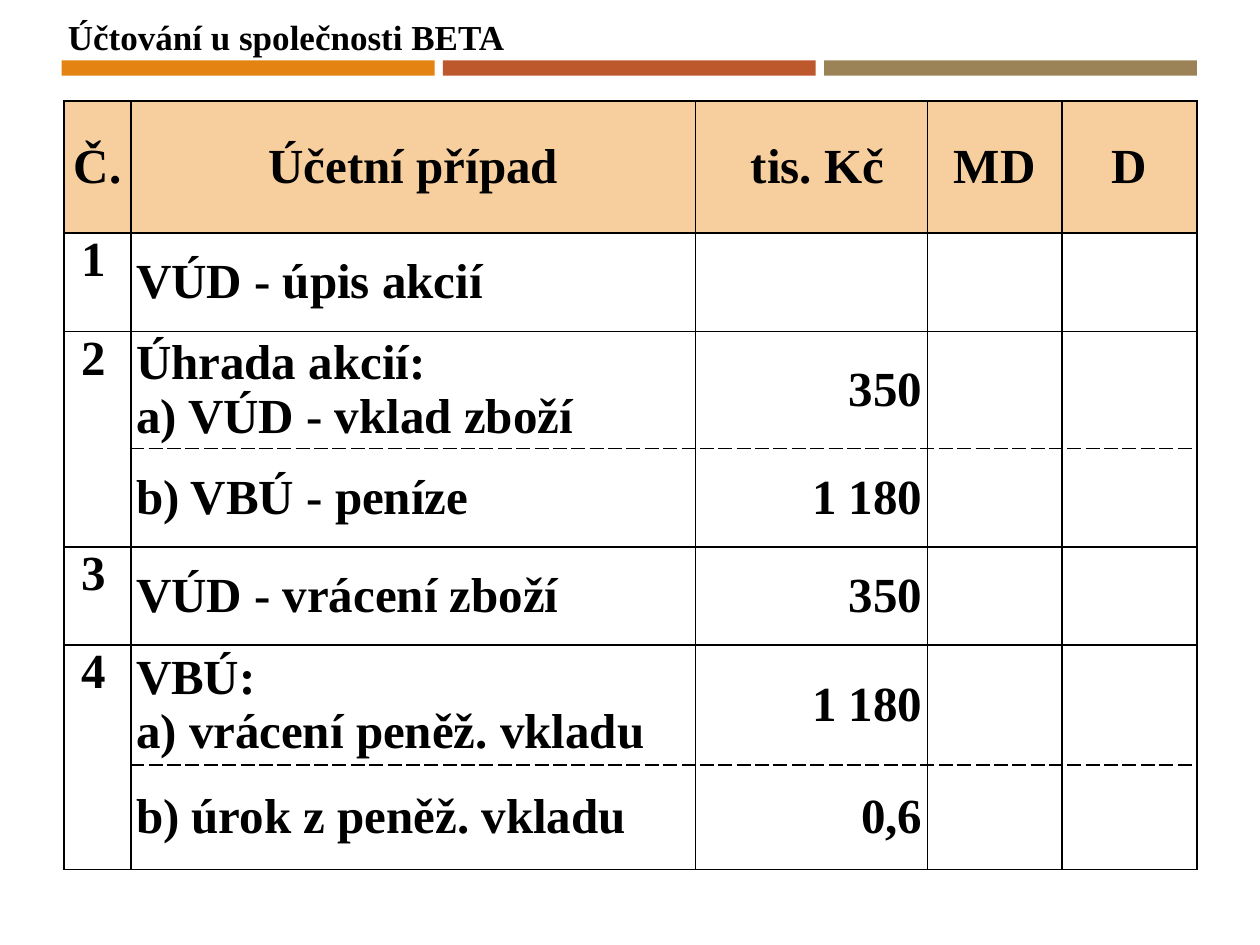
from dataclasses import dataclass

from lxml.etree import SubElement
from pptx import Presentation
from pptx.dml.color import RGBColor
from pptx.enum.shapes import MSO_SHAPE
from pptx.enum.text import MSO_ANCHOR, MSO_AUTO_SIZE, PP_ALIGN
from pptx.oxml.ns import qn
from pptx.util import Inches, Pt


@dataclass(frozen=True)
class Theme:
    font: str = "Times New Roman"
    title_size: int = 20
    table_size: int = 28
    text: str = "000000"
    header: str = "F7CE9D"
    bars: tuple = ("E48312", "BD582C", "9B8357")


theme = Theme()


def add_text(paragraph, text, size):
    run = paragraph.add_run()
    run.text = text
    run.font.name = theme.font
    run.font.size = Pt(size)
    run.font.bold = True
    run.font.color.rgb = RGBColor.from_string(theme.text)


def set_borders(cell, dashed_sides):
    properties = cell._tc.get_or_add_tcPr()
    for side in "LRTB":
        line = SubElement(properties, qn(f"a:ln{side}"), w=str(Pt(1)))
        fill = SubElement(line, qn("a:solidFill"))
        SubElement(fill, qn("a:srgbClr"), val=theme.text)
        dash = "dash" if side in dashed_sides else "solid"
        SubElement(line, qn("a:prstDash"), val=dash)


presentation = Presentation()
presentation.slide_width = Inches(10)
presentation.slide_height = Inches(7.5)
slide = presentation.slides.add_slide(presentation.slide_layouts[6])

# Coloured bars under the title
for index, color in enumerate(theme.bars):
    bar = slide.shapes.add_shape(
        MSO_SHAPE.RECTANGLE, Inches(0.49 + index * 3.025), Inches(0.48),
        Inches(2.96), Inches(0.12))
    bar.shadow.inherit = False
    bar.fill.solid()
    bar.fill.fore_color.rgb = RGBColor.from_string(color)
    bar.line.fill.background()

# Journal table: entries a) and b) share one number and a dashed divider
column_widths = [0.53, 4.48, 1.84, 1.07, 1.07]
row_heights = [1.05, 0.78, 0.93, 0.78, 0.78, 0.95, 0.83]
rows = [
    ["Č.", "Účetní případ", " tis. Kč", "MD", "D"],
    [" 1", "VÚD - úpis akcií", "", "", ""],
    [" 2", "Úhrada akcií:\na) VÚD - vklad zboží", "350", "", ""],
    ["", "b) VBÚ - peníze", "1 180", "", ""],
    [" 3", "VÚD - vrácení zboží", "350", "", ""],
    [" 4", "VBÚ:\na) vrácení peněž. vkladu", "1 180", "", ""],
    ["", "b) úrok z peněž. vkladu", "0,6", "", ""],
]
split_rows = (2, 5)
alignments = [PP_ALIGN.LEFT, PP_ALIGN.JUSTIFY, PP_ALIGN.RIGHT,
              PP_ALIGN.CENTER, PP_ALIGN.CENTER]

table = slide.shapes.add_table(
    len(rows), len(column_widths), Inches(0.51), Inches(0.8),
    Inches(sum(column_widths)), Inches(sum(row_heights))).table
table.first_row = False
table.horz_banding = False
for column, width in zip(table.columns, column_widths):
    column.width = Inches(width)
for row, height in zip(table.rows, row_heights):
    row.height = Inches(height)

for row_index, texts in enumerate(rows):
    is_header = row_index == 0
    for column_index, text in enumerate(texts):
        cell = table.cell(row_index, column_index)
        is_number = column_index == 0 and not is_header
        cell.margin_left = cell.margin_right = Inches(0.04)
        cell.margin_top = cell.margin_bottom = 0
        cell.vertical_anchor = MSO_ANCHOR.TOP if is_number else MSO_ANCHOR.MIDDLE

        dashed_sides = ""
        if column_index > 0 and row_index in split_rows:
            dashed_sides = "B"
        elif column_index > 0 and row_index - 1 in split_rows:
            dashed_sides = "T"
        set_borders(cell, dashed_sides)

        if is_header:
            cell.fill.solid()
            cell.fill.fore_color.rgb = RGBColor.from_string(theme.header)
        else:
            cell.fill.background()

        if not text:
            continue
        frame = cell.text_frame
        for line_index, line_text in enumerate(text.split("\n")):
            paragraph = frame.add_paragraph() if line_index else frame.paragraphs[0]
            paragraph.alignment = (
                PP_ALIGN.CENTER if is_header else alignments[column_index])
            add_text(paragraph, line_text, theme.table_size)

for row_index in split_rows:
    table.cell(row_index, 0).merge(table.cell(row_index + 1, 0))

# Title
title = slide.shapes.add_textbox(
    Inches(0.44), Inches(0.07), Inches(3.69), Inches(0.44))
title.text_frame.word_wrap = False
title.text_frame.auto_size = MSO_AUTO_SIZE.SHAPE_TO_FIT_TEXT
add_text(title.text_frame.paragraphs[0], "Účtování u společnosti BETA",
         theme.title_size)

presentation.save("out.pptx")
